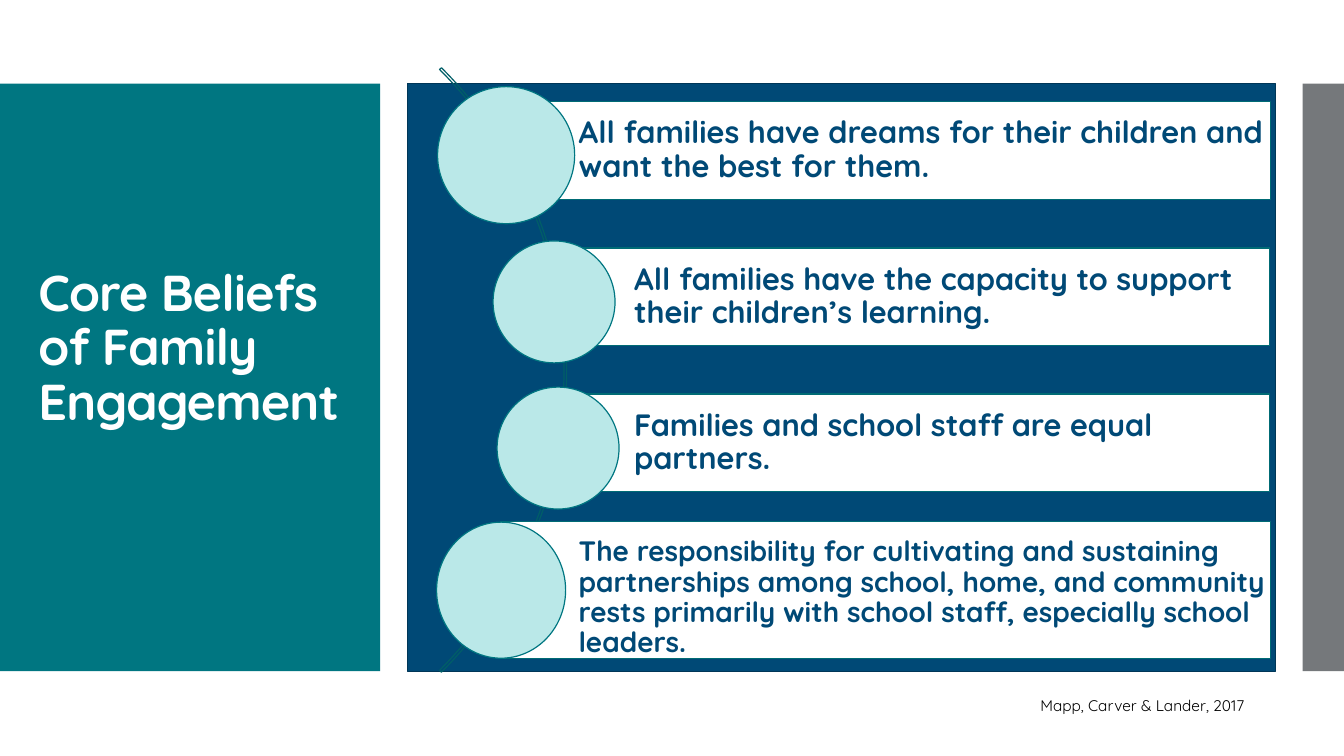
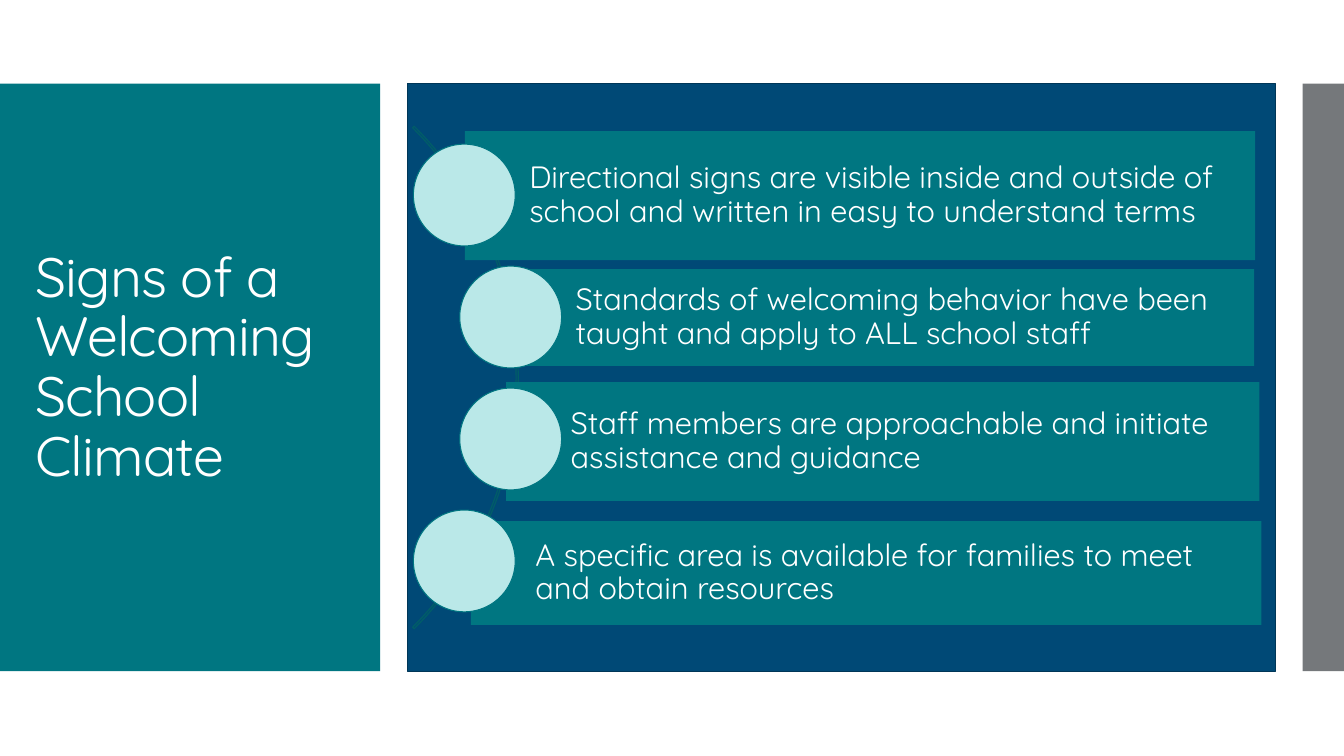
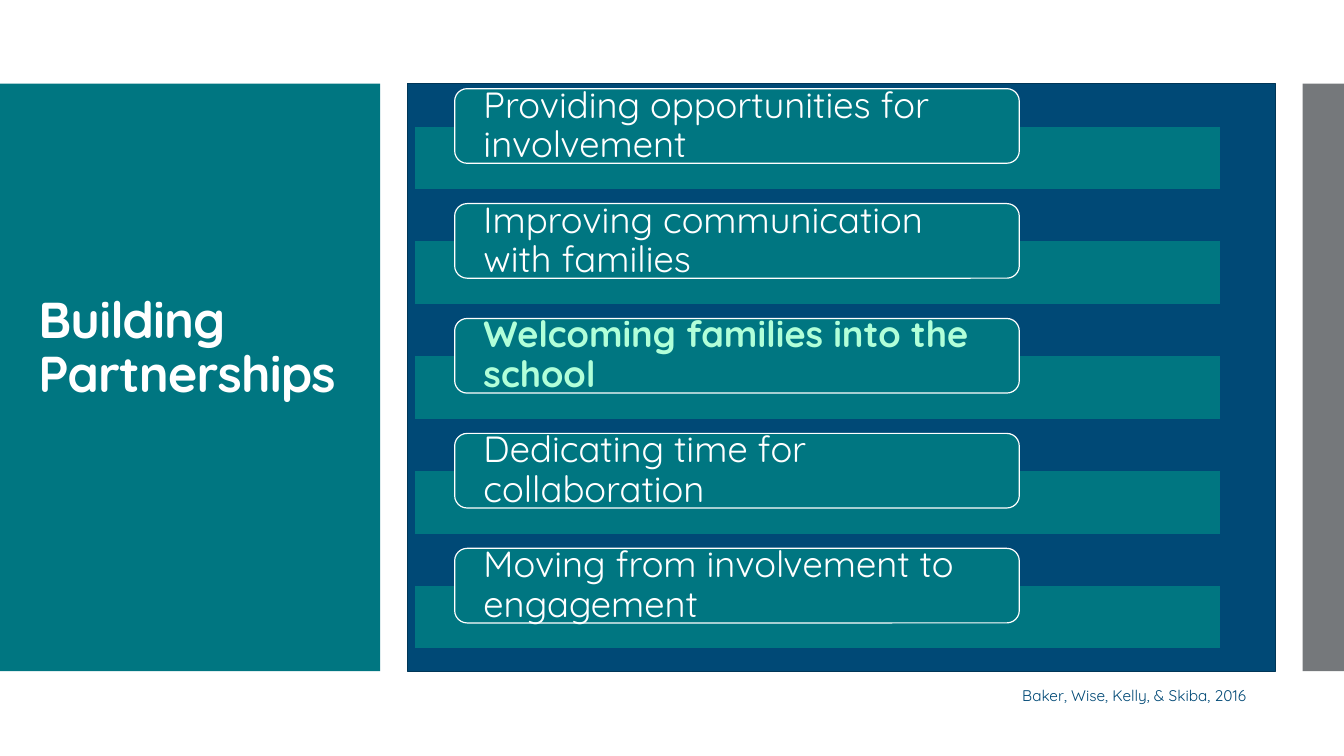
from pptx import Presentation
from pptx.dml.color import RGBColor
from pptx.enum.shapes import MSO_SHAPE
from pptx.enum.text import MSO_ANCHOR, MSO_AUTO_SIZE, PP_ALIGN
from pptx.util import Pt

PX = 9144  # 100 px to the inch
FONT = "Quicksand"
COLORS = {
    "navy": "004976",
    "navy edge": "003657",
    "teal": "007681",
    "teal edge": "006B75",
    "arc": "005E67",
    "gray": "75787B",
    "aqua": "BAE8E8",
    "mint": "B1FFD9",
    "white": "FFFFFF",
    "black": "000000",
}


def add_block(shapes, preset, box, fill=None, edge=None, edge_width=0.85):
    block = shapes.add_shape(preset, *[n * PX for n in box])
    block.shadow.inherit = False
    if fill:
        block.fill.solid()
        block.fill.fore_color.rgb = RGBColor.from_string(COLORS[fill])
    else:
        block.fill.background()
    if edge:
        block.line.color.rgb = RGBColor.from_string(COLORS[edge])
        block.line.width = Pt(edge_width)
    else:
        block.line.fill.background()
    return block


def write(holder, text, size, color, bold=False, insets=(10, 5, 10, 5),
          spacing=0.9, wrap=True):
    frame = holder.text_frame
    frame.word_wrap = wrap
    frame.auto_size = MSO_AUTO_SIZE.NONE
    frame.vertical_anchor = MSO_ANCHOR.MIDDLE
    (frame.margin_left, frame.margin_top,
     frame.margin_right, frame.margin_bottom) = [n * PX for n in insets]
    paragraph = frame.paragraphs[0]
    paragraph.alignment = PP_ALIGN.LEFT
    paragraph.line_spacing = spacing
    run = paragraph.add_run()
    run.text = text
    run.font.name = FONT
    run.font.size = Pt(size)
    run.font.bold = bold
    run.font.color.rgb = RGBColor.from_string(COLORS[color])
    return run


prs = Presentation()
prs.slide_width, prs.slide_height = 1333 * PX, 750 * PX
layout = prs.slide_layouts[5]

# Titles: text, box, size, bold
titles = [
    ("Core Beliefs of Family Engagement", (28, 95, 336, 503), 36, True),
    ("Signs of a Welcoming School Climate", (25, 240, 331, 252), 39.6, False),
    ("Building Partnerships", (28, 95, 322, 503), 36, True),
]
slides = []
for text, box, size, bold in titles:
    slide = prs.slides.add_slide(layout)
    title = slide.shapes.title
    title.left, title.top, title.width, title.height = [n * PX for n in box]
    run = write(title, text, size, "white", bold)
    run._r.get_or_add_rPr().set("spc", "-60")
    slides.append(slide)
beliefs, climate, partnerships = slides

# Shared bands, moved to the layout behind its placeholders
bands = [
    ((404, 83, 861, 583), "navy", "navy edge"),
    ((0, 83, 377, 583), "teal", None),
    ((1292, 83, 42, 583), "gray", None),
]
for position, (box, fill, edge) in enumerate(bands, start=2):
    band = add_block(beliefs.shapes, MSO_SHAPE.RECTANGLE, box, fill, edge)
    layout.shapes.element.insert(position, band.element)

# Curved lists: bar box, circle box, text, size, insets
belief_insets = (77, 6, 6, 6)
belief_rows = [
    ((497, 101, 763, 97), (434, 86, 136, 136),
     "All families have dreams for their children and want the best for them.",
     22, belief_insets),
    ((552, 246, 707, 97), (489, 239, 121, 121),
     "All families have the capacity to support their children’s learning.",
     22, belief_insets),
    ((552, 391, 707, 97), (493, 384, 121, 121),
     "Families and school staff are equal partners.",
     22, belief_insets),
    ((497, 517, 763, 136), (433, 518, 128, 135),
     "The responsibility for cultivating and sustaining partnerships among "
     "school, home, and community rests primarily with school staff, "
     "especially school leaders.",
     20, (77, 20, 3, 3)),
]
climate_insets = (64, 6, 6, 6)
climate_rows = [
    ((461, 130, 784, 128), (410, 143, 101, 101),
     "Directional signs are visible inside and outside of school and written "
     "in easy to understand terms",
     22, climate_insets),
    ((507, 267, 737, 96), (456, 264, 101, 101),
     "Standards of welcoming behavior have been taught and apply to ALL "
     "school staff",
     22, climate_insets),
    ((502, 379, 747, 118), (456, 385, 101, 101),
     "Staff members are approachable and initiate assistance and guidance",
     22, climate_insets),
    ((467, 517, 784, 103), (410, 506, 101, 101),
     "A specific area is available for families to meet and obtain resources",
     22, climate_insets),
]
curved_lists = [
    (beliefs, (-286, -57, 848, 848), belief_rows,
     "white", "teal edge", "navy", True, 0.85),
    (climate, (-191, 22, 705, 705), climate_rows,
     "teal", None, "white", False, 0.75),
]
for slide, arc_box, rows, fill, edge, ink, bold, ring in curved_lists:
    arc = add_block(slide.shapes, MSO_SHAPE.BLOCK_ARC, arc_box, None, "arc")
    for index, value in enumerate((189, 27, 0.003)):
        arc.adjustments[index] = value
    for bar_box, circle_box, text, size, insets in rows:
        bar = add_block(slide.shapes, MSO_SHAPE.RECTANGLE, bar_box, fill, edge)
        write(bar, text, size, ink, bold, insets)
        add_block(slide.shapes, MSO_SHAPE.OVAL, circle_box, "aqua", "teal", ring)

# Partnership steps, at an equal pitch
steps = [
    "Providing opportunities for involvement",
    "Improving communication with families",
    "Welcoming families into the school",
    "Dedicating time for collaboration",
    "Moving from involvement to engagement",
]
current_step = 2
step_pitch = 114
for index, text in enumerate(steps):
    top = 88 + index * step_pitch
    add_block(partnerships.shapes, MSO_SHAPE.RECTANGLE,
              (411, top + 37, 800, 63), "teal", "navy")
    step = add_block(partnerships.shapes, MSO_SHAPE.ROUNDED_RECTANGLE,
                     (451, top, 560, 74), "teal", "white")
    current = index == current_step
    write(step, text, 26, "mint" if current else "white", current,
          (25, 4, 25, 4))

# Citations
citations = [
    (beliefs, "Mapp, Carver & Lander, 2017", (1022, 685, 283, 29), "black"),
    (partnerships, "Baker, Wise, Kelly, & Skiba, 2016",
     (1004, 675, 259, 29), "navy"),
]
for slide, text, box, color in citations:
    citation = slide.shapes.add_textbox(*[n * PX for n in box])
    write(citation, text, 11, color, spacing=1.0)

prs.save("out.pptx")
